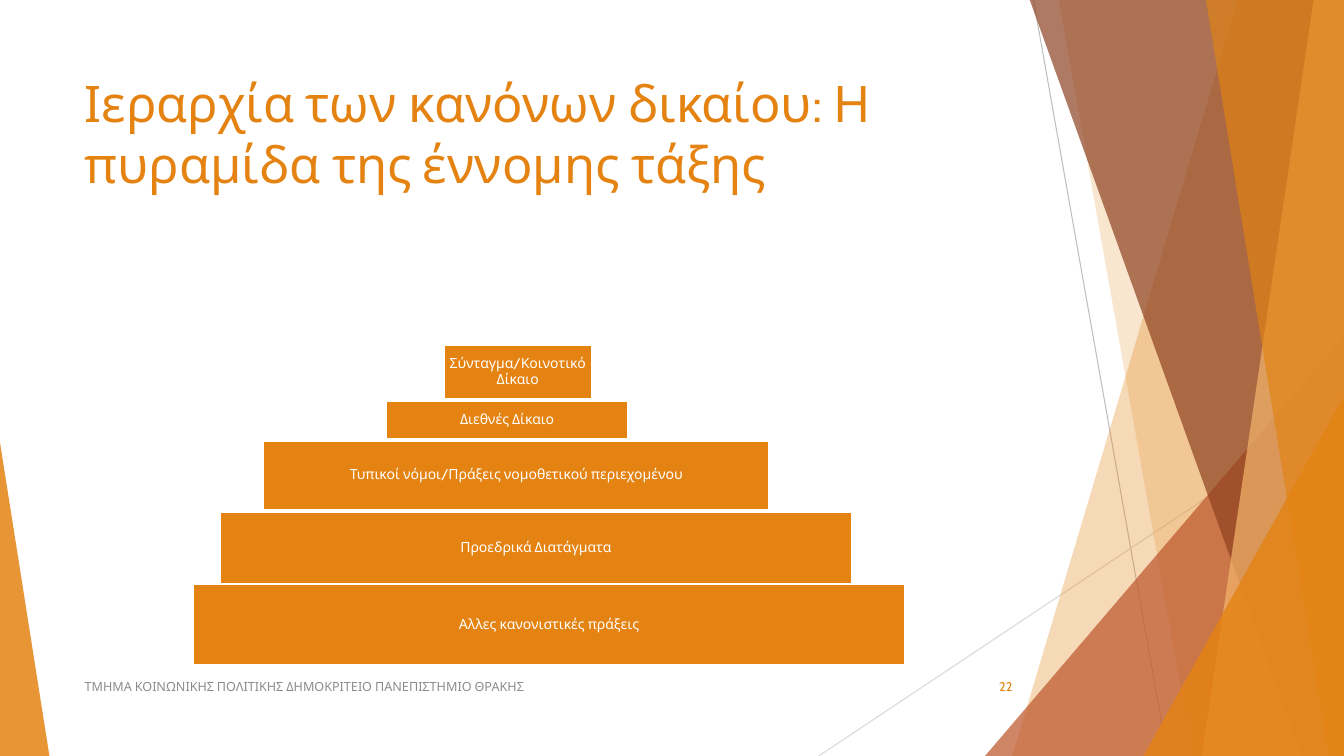
import lxml.etree
import pptx
import pptx.dml.color
import pptx.enum.shapes
import pptx.enum.text
import pptx.oxml.ns
import pptx.util

Inches = pptx.util.Inches
Pt = pptx.util.Pt
RGBColor = pptx.dml.color.RGBColor
Shapes = pptx.enum.shapes.MSO_SHAPE
Align = pptx.enum.text.PP_ALIGN
Anchor = pptx.enum.text.MSO_ANCHOR
qn = pptx.oxml.ns.qn

ORANGE = RGBColor(0xE4, 0x83, 0x12)
RUST = RGBColor(0xBD, 0x58, 0x2C)
BROWN = RGBColor(0x8E, 0x42, 0x21)
PEACH = RGBColor(0xF3, 0xB5, 0x6C)
WHITE = RGBColor(0xFF, 0xFF, 0xFF)
GREY = RGBColor(0x8C, 0x8C, 0x8C)
LINE_GREY = RGBColor(0xBF, 0xBF, 0xBF)
LIGHT_GREY = RGBColor(0xD9, 0xD9, 0xD9)

FONT = "Cabin"
WIDTH, HEIGHT = 13.33, 7.5
BAND_TOP = -0.01

# Levels of the pyramid: label, left, top, width, height
LEVELS = [
    ("Σύνταγμα/Κοινοτικό Δίκαιο", 4.4, 3.42, 1.47, 0.54),
    ("Διεθνές Δίκαιο", 3.83, 3.98, 2.4, 0.38),
    ("Τυπικοί νόμοι/Πράξεις νομοθετικού περιεχομένου", 2.61, 4.37, 5.02, 0.69),
    ("Προεδρικά Διατάγματα", 2.18, 5.08, 6.27, 0.71),
    ("Αλλες κανονιστικές πράξεις", 1.91, 5.79, 7.07, 0.81),
]


def fill_translucent(shape, color, opacity):
    shape.shadow.inherit = False
    shape.line.fill.background()
    shape.fill.solid()
    shape.fill.fore_color.rgb = color
    color_element = shape.element.spPr.find(qn("a:solidFill"))[0]
    alpha = lxml.etree.SubElement(color_element, qn("a:alpha"))
    alpha.set("val", str(opacity * 1000))


def add_line(slide, start, end, color):
    connector = slide.shapes.add_connector(
        pptx.enum.shapes.MSO_CONNECTOR.STRAIGHT,
        *[Inches(value) for value in (*start, *end)])
    connector.line.color.rgb = color
    connector.line.width = Pt(0.75)
    lxml.etree.SubElement(connector.element.spPr, qn("a:effectLst"))


def add_band(slide, top_x, bottom_x, color, opacity):
    """A slanted left edge, filled up to the right side of the slide."""
    builder = slide.shapes.build_freeform(Inches(top_x), Inches(BAND_TOP))
    corners = [(WIDTH, BAND_TOP), (WIDTH, HEIGHT), (bottom_x, HEIGHT)]
    builder.add_line_segments([(Inches(x), Inches(y)) for x, y in corners])
    fill_translucent(builder.convert_to_shape(), color, opacity)


def add_triangle(slide, left, top, width, apex, color, opacity):
    """A triangle standing on the bottom edge of the slide."""
    shape = slide.shapes.add_shape(
        Shapes.ISOSCELES_TRIANGLE, Inches(left), Inches(top),
        Inches(width), Inches(HEIGHT - top))
    shape.adjustments[0] = apex
    fill_translucent(shape, color, opacity)


def set_text(shape, text, size, color, anchor, alignment):
    text_frame = shape.text_frame
    text_frame.text = text
    text_frame.word_wrap = True
    text_frame.auto_size = pptx.enum.text.MSO_AUTO_SIZE.NONE
    text_frame.vertical_anchor = anchor
    paragraph = text_frame.paragraphs[0]
    paragraph.alignment = alignment
    font = paragraph.runs[0].font
    font.name = FONT
    font.size = Pt(size)
    font.color.rgb = color
    return text_frame


def add_title(slide, text):
    title = slide.shapes.title
    title.left, title.top = Inches(0.74), Inches(0.67)
    title.width, title.height = Inches(9.4), Inches(1.44)
    set_text(title, text, 36, ORANGE, Anchor.TOP, Align.LEFT)


def add_footer(slide, text, left, width, color, alignment):
    box = slide.shapes.add_textbox(
        Inches(left), Inches(6.61), Inches(width), Inches(0.4))
    set_text(box, text, 9, color, Anchor.MIDDLE, alignment)


def add_level(slide, label, left, top, width, height):
    shape = slide.shapes.add_shape(
        Shapes.RECTANGLE, Inches(left), Inches(top),
        Inches(width), Inches(height))
    shape.shadow.inherit = False
    shape.fill.solid()
    shape.fill.fore_color.rgb = ORANGE
    shape.line.color.rgb = WHITE
    shape.line.width = Pt(1.5)
    text_frame = set_text(shape, label, 10, WHITE, Anchor.MIDDLE, Align.CENTER)
    text_frame.margin_left = text_frame.margin_right = Inches(0.04)
    text_frame.margin_top = text_frame.margin_bottom = Inches(0.04)
    text_frame.paragraphs[0].line_spacing = 0.9


def add_decoration(slide):
    add_line(slide, (10.25, 0), (11.58, HEIGHT), LINE_GREY)
    add_line(slide, (WIDTH, 4.03), (8.12, HEIGHT), LIGHT_GREY)
    add_band(slide, 12.28, 10.04, ORANGE, 30)
    add_band(slide, 10.5, 11.83, ORANGE, 20)
    add_triangle(slide, 9.77, 3.33, 3.56, 1, RUST, 72)
    add_band(slide, 10.21, 12.91, BROWN, 70)
    add_band(slide, 13.03, 11.92, PEACH, 70)
    add_band(slide, 11.96, 13.18, ORANGE, 65)
    add_triangle(slide, 11.34, 3.93, 1.99, 1, ORANGE, 80)
    add_triangle(slide, 0, 4.39, 0.49, 0, ORANGE, 85)


def main():
    presentation = pptx.Presentation()
    presentation.slide_width = Inches(WIDTH)
    presentation.slide_height = Inches(HEIGHT)
    slide = presentation.slides.add_slide(presentation.slide_layouts[5])

    # Background facets
    add_decoration(slide)

    # Title and footer
    add_title(slide, "Ιεραρχία των κανόνων δικαίου: Η πυραμίδα της έννομης τάξης")
    add_footer(slide, "ΤΜΗΜΑ ΚΟΙΝΩΝΙΚΗΣ ΠΟΛΙΤΙΚΗΣ ΔΗΜΟΚΡΙΤΕΙΟ ΠΑΝΕΠΙΣΤΗΜΙΟ ΘΡΑΚΗΣ",
               0.74, 6.89, GREY, Align.LEFT)
    add_footer(slide, "22", 9.39, 0.75, ORANGE, Align.RIGHT)

    # Pyramid of legal rules
    for level in LEVELS:
        add_level(slide, *level)

    presentation.save("out.pptx")


if __name__ == "__main__":
    main()
